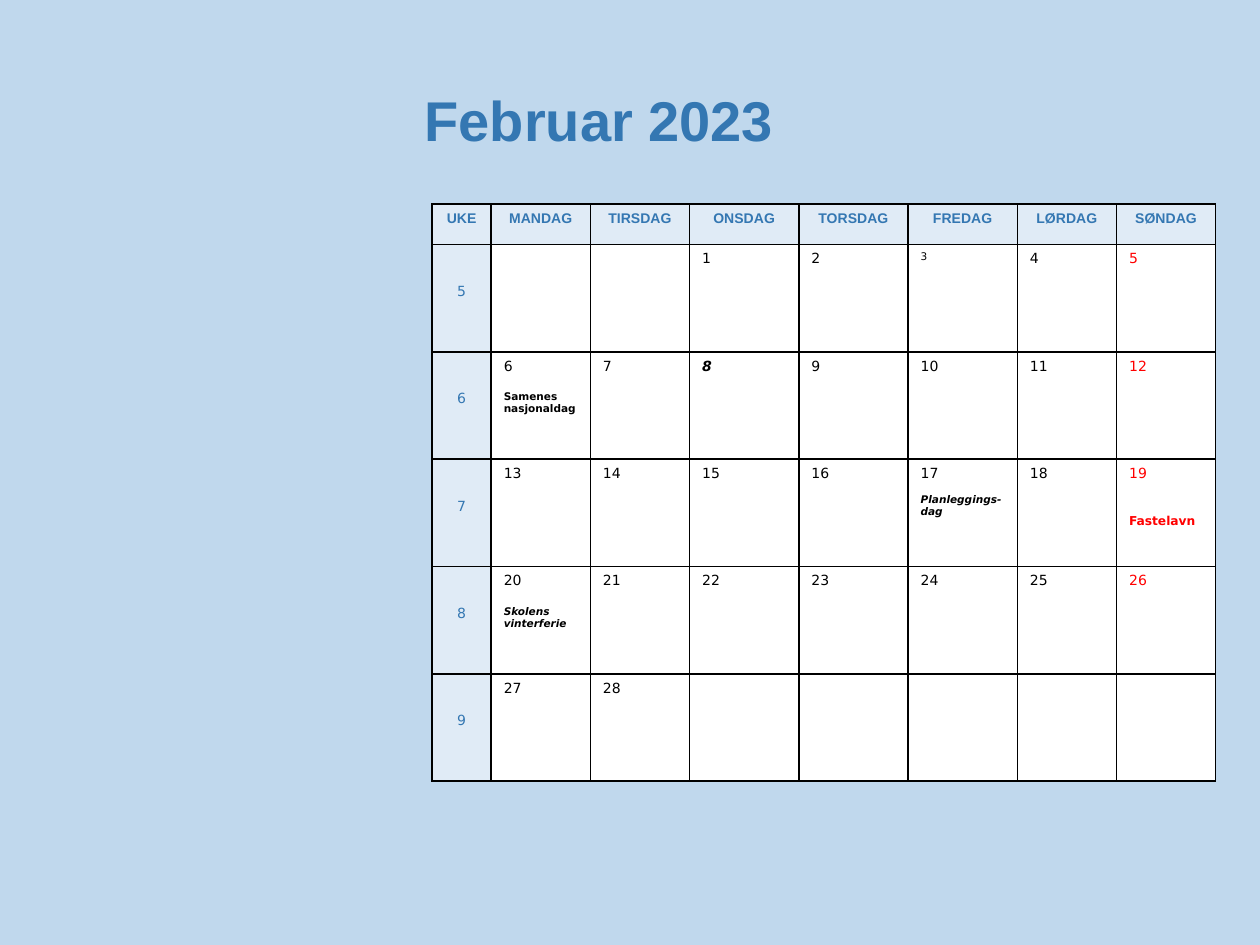
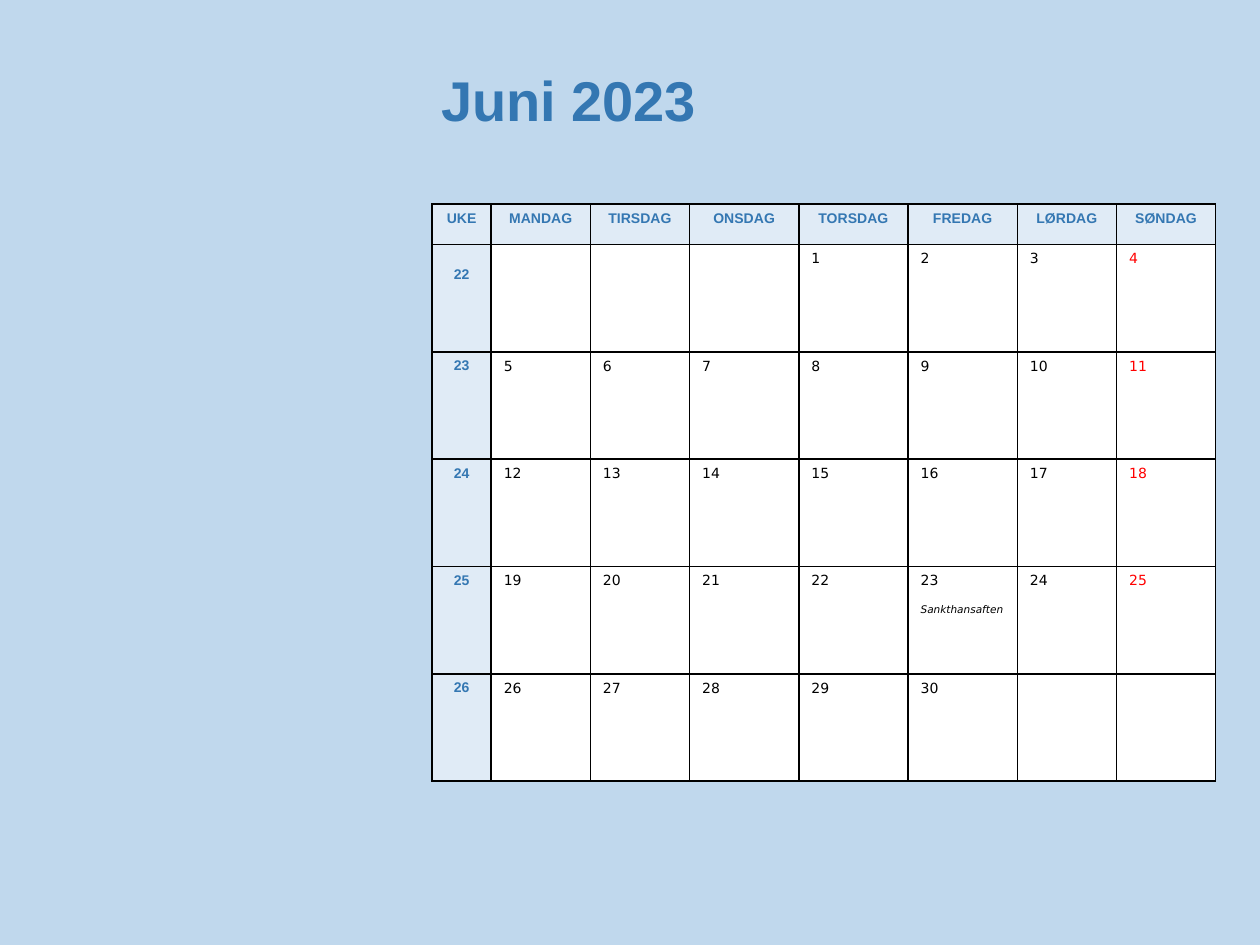
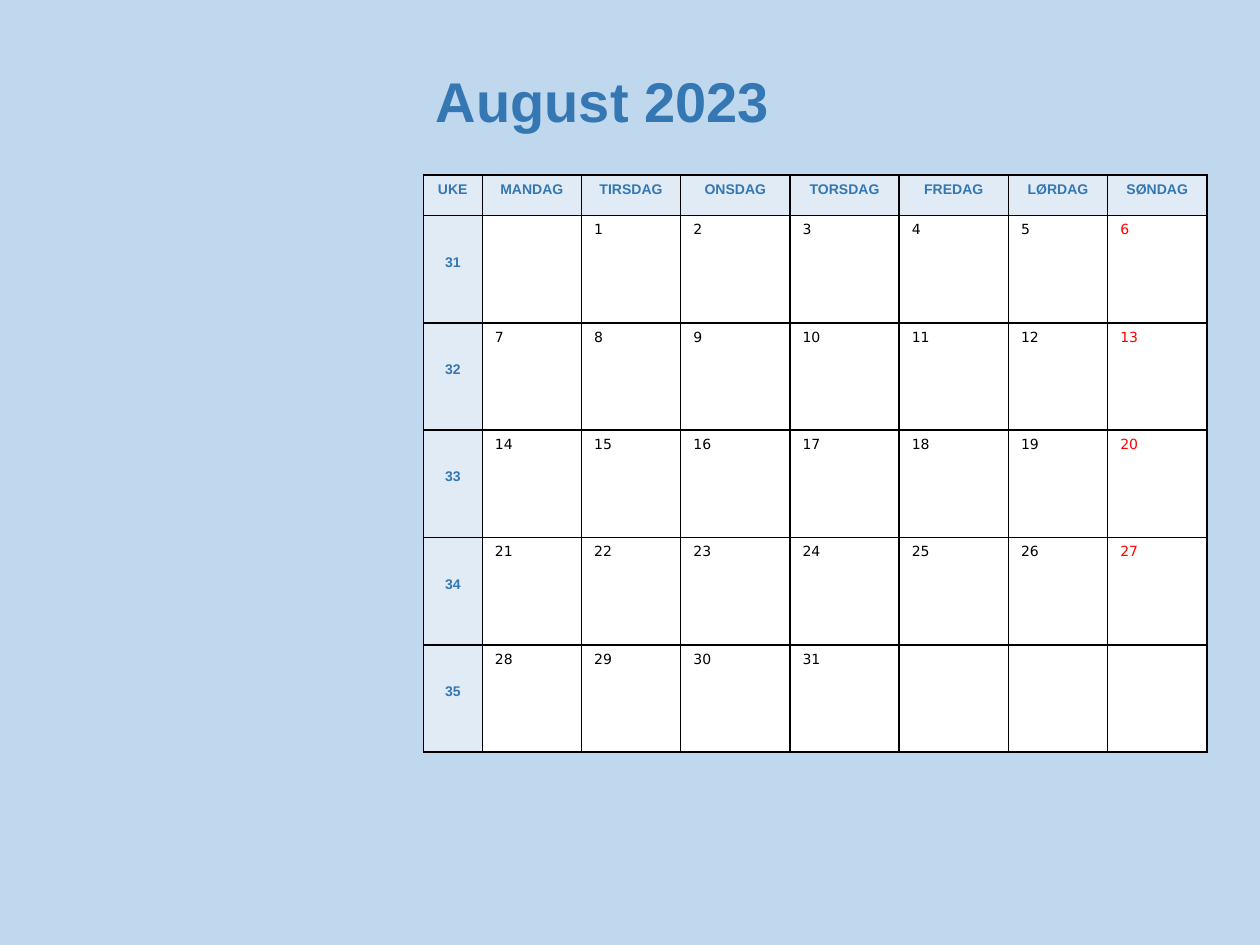
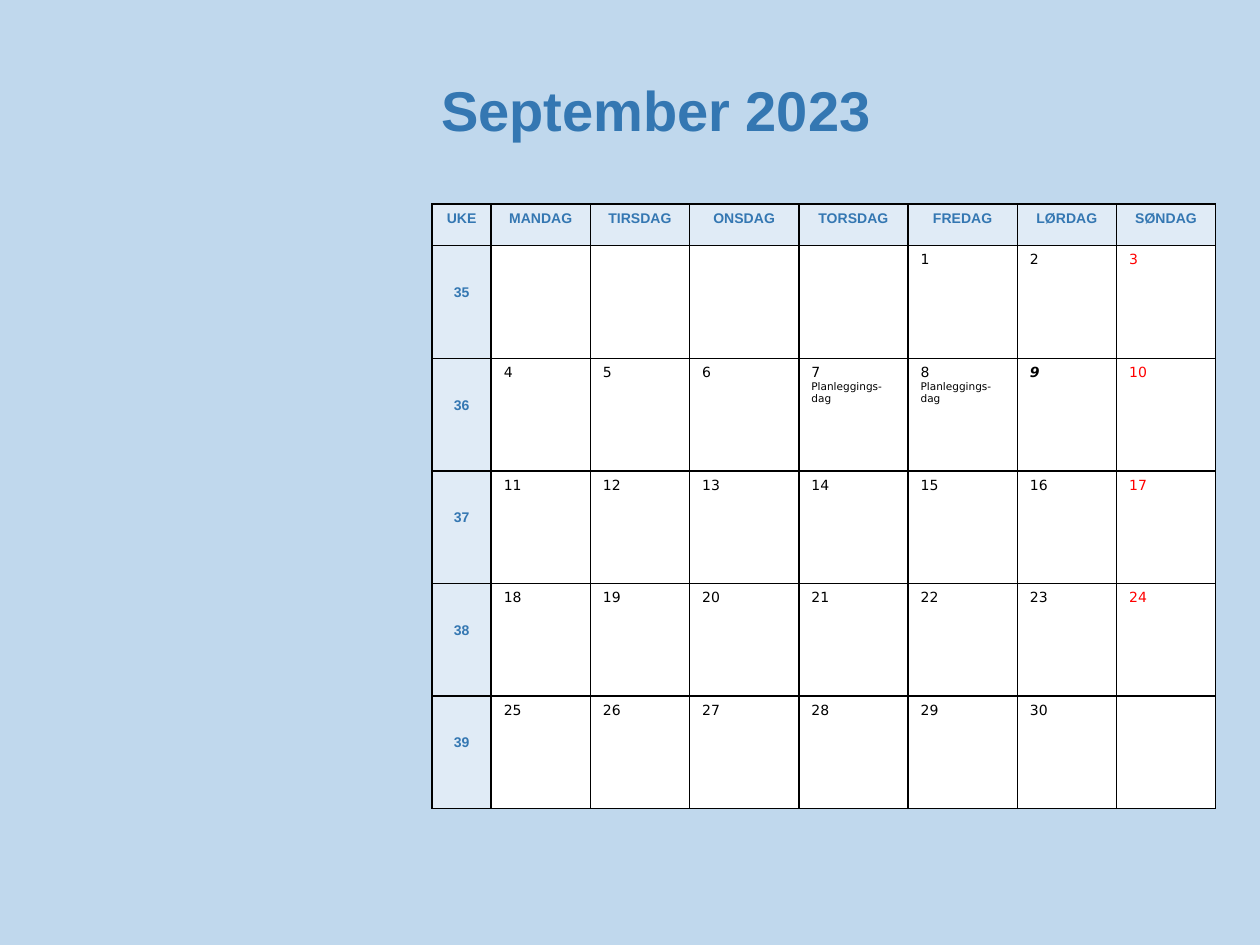
from dataclasses import dataclass, field

from lxml import etree
from pptx import Presentation
from pptx.dml.color import RGBColor
from pptx.enum.text import MSO_ANCHOR, MSO_AUTO_SIZE, PP_ALIGN
from pptx.oxml.ns import qn
from pptx.util import Inches, Pt

LEFT, CENTER = PP_ALIGN.LEFT, PP_ALIGN.CENTER
MIDDLE = MSO_ANCHOR.MIDDLE
NO_AUTOFIT = MSO_AUTO_SIZE.NONE
TITLE_ONLY = 5


@dataclass(frozen=True)
class Theme:
    background: str = "C0D8ED"
    accent: str = "3477B2"
    band: str = "E0EBF6"
    paper: str = "FFFFFF"
    ink: str = "000000"
    holiday: str = "FF0000"
    heading_font: str = "Arial"
    date_font: str = "DejaVu Sans"
    title_size: float = 32
    cell_size: float = 8
    small_size: float = 6
    border_width: float = 1


THEME = Theme()

HEADINGS = ("UKE", "MANDAG", "TIRSDAG", "ONSDAG", "TORSDAG", "FREDAG", "LØRDAG", "SØNDAG")
COLUMN_SHARES = (0.47, 0.79, 0.79, 0.87, 0.87, 0.87, 0.79, 0.79)
GRID_WIDTH = 6.22
WEEKS = 5
DAYS_PER_WEEK = 7
SUNDAY = 7
CELL_MARGIN = 0.05
LINE = 0.13  # height of one line of cell text


@dataclass(frozen=True)
class Note:
    """A label under a date; gap is the space above it in points."""
    text: str
    gap: float = 0
    size: float = THEME.small_size
    bold: bool = False
    italic: bool = False


@dataclass(frozen=True)
class Month:
    """One calendar page; first_weekday counts from 1 for Monday."""
    title: str
    title_box: tuple[float, float, float, float]
    first_week: int
    first_weekday: int
    days: int
    grid_at: tuple[float, float] = (3.43, 1.62)
    grid_height: float = 4.58
    header_height: float = 0.32
    week_font: str = THEME.heading_font
    week_bold: bool = True
    week_drops: tuple[float, ...] = (2 * LINE,) * WEEKS
    notes: dict[int, Note] = field(default_factory=dict)
    emphasised: tuple[int, ...] = ()
    small: tuple[int, ...] = ()


MONTHS = (
    Month(
        "Februar 2023", (3.27, 0.44, 7.79, 1.01), first_week=5, first_weekday=3, days=28,
        week_font=THEME.date_font, week_bold=False,
        notes={
            6: Note("Samenes nasjonaldag", gap=9.3, bold=True),
            17: Note("Planleggings-dag", gap=7, bold=True, italic=True),
            19: Note("Fastelavn", gap=18.6, size=7, bold=True),
            20: Note("Skolens vinterferie", gap=9.3, bold=True, italic=True),
        },
        emphasised=(8,), small=(3,),
    ),
    Month(
        "Juni 2023", (3.4, 0.28, 4.45, 1.01), first_week=22, first_weekday=4, days=30,
        week_drops=(LINE, 0, 0, 0, 0),
        notes={23: Note("Sankthansaften", gap=8.2, italic=True)},
    ),
    Month(
        "August 2023", (3.36, 0.29, 5.08, 1.01), first_week=31, first_weekday=2, days=31,
        grid_at=(3.36, 1.39),
    ),
    Month(
        "September 2023", (3.4, 0.36, 4.92, 1.01), first_week=35, first_weekday=5, days=30,
        grid_height=4.8, header_height=0.33,
        notes={day: Note("Planleggings-dag") for day in (7, 8)},
        emphasised=(9,),
    ),
)


def style_paragraph(para, font: str, size: float, color: str, bold: bool = False,
                    italic: bool = False, align=LEFT) -> None:
    para.alignment = align
    para.font.name = font
    para.font.size = Pt(size)
    para.font.bold = bold
    para.font.italic = italic
    para.font.color.rgb = RGBColor.from_string(color)


def paint_cell(cell, color: str) -> None:
    """Fill a cell and draw its four borders."""
    cell.fill.solid()
    cell.fill.fore_color.rgb = RGBColor.from_string(color)
    properties = cell._tc.get_or_add_tcPr()
    for position, side in enumerate(("a:lnL", "a:lnR", "a:lnT", "a:lnB")):
        line = etree.Element(qn(side), w=str(Pt(THEME.border_width)))
        fill = etree.SubElement(line, qn("a:solidFill"))
        etree.SubElement(fill, qn("a:srgbClr"), val=THEME.ink)
        properties.insert(position, line)


def write_label(cell, text: str, font: str = THEME.heading_font, bold: bool = True,
                drop: float = 0) -> None:
    """Write a weekday heading or week number, lowered by drop inches."""
    paint_cell(cell, THEME.band)
    cell.margin_top = Inches(CELL_MARGIN + drop)
    cell.text = text
    style_paragraph(cell.text_frame.paragraphs[0], font, THEME.cell_size, THEME.accent,
                    bold, align=CENTER)


def write_day(cell, month: Month, day: int, color: str) -> None:
    frame = cell.text_frame
    date = frame.paragraphs[0]
    date.text = str(day)
    emphasised = day in month.emphasised
    size = THEME.small_size if day in month.small else THEME.cell_size
    style_paragraph(date, THEME.date_font, size, color, emphasised, emphasised)
    note = month.notes.get(day)
    if note:
        para = frame.add_paragraph()
        para.text = note.text
        para.space_before = Pt(note.gap)
        style_paragraph(para, THEME.date_font, note.size, color, note.bold, note.italic)


def add_title(page, month: Month) -> None:
    title = page.shapes.title
    title.left, title.top, title.width, title.height = map(Inches, month.title_box)
    title.text = month.title
    title.text_frame.vertical_anchor = MIDDLE
    title.text_frame.auto_size = NO_AUTOFIT
    style_paragraph(title.text_frame.paragraphs[0], THEME.heading_font, THEME.title_size,
                    THEME.accent, bold=True)


def add_grid(page, month: Month) -> None:
    left, top = map(Inches, month.grid_at)
    table = page.shapes.add_table(WEEKS + 1, len(HEADINGS), left, top, Inches(GRID_WIDTH),
                                  Inches(month.grid_height)).table
    table.first_row = table.horz_banding = False
    for column, share in zip(table.columns, COLUMN_SHARES):
        column.width = Inches(GRID_WIDTH * share / sum(COLUMN_SHARES))
    week_height = (month.grid_height - month.header_height) / WEEKS
    for row, height in zip(table.rows, [month.header_height] + [week_height] * WEEKS):
        row.height = Inches(height)

    for column, heading in enumerate(HEADINGS):
        write_label(table.cell(0, column), heading)
    for week, drop in enumerate(month.week_drops):
        write_label(table.cell(week + 1, 0), str(month.first_week + week), month.week_font,
                    month.week_bold, drop)
        for weekday in range(1, DAYS_PER_WEEK + 1):
            cell = table.cell(week + 1, weekday)
            paint_cell(cell, THEME.paper)
            day = week * DAYS_PER_WEEK + weekday - month.first_weekday + 1
            if 1 <= day <= month.days:
                write_day(cell, month, day, THEME.holiday if weekday == SUNDAY else THEME.ink)


def main() -> None:
    deck = Presentation()
    deck.slide_width, deck.slide_height = Inches(10), Inches(7.5)
    background = deck.slide_master.background.fill
    background.solid()
    background.fore_color.rgb = RGBColor.from_string(THEME.background)
    for month in MONTHS:
        page = deck.slides.add_slide(deck.slide_layouts[TITLE_ONLY])
        add_grid(page, month)
        add_title(page, month)
    deck.save("out.pptx")


if __name__ == "__main__":
    main()
